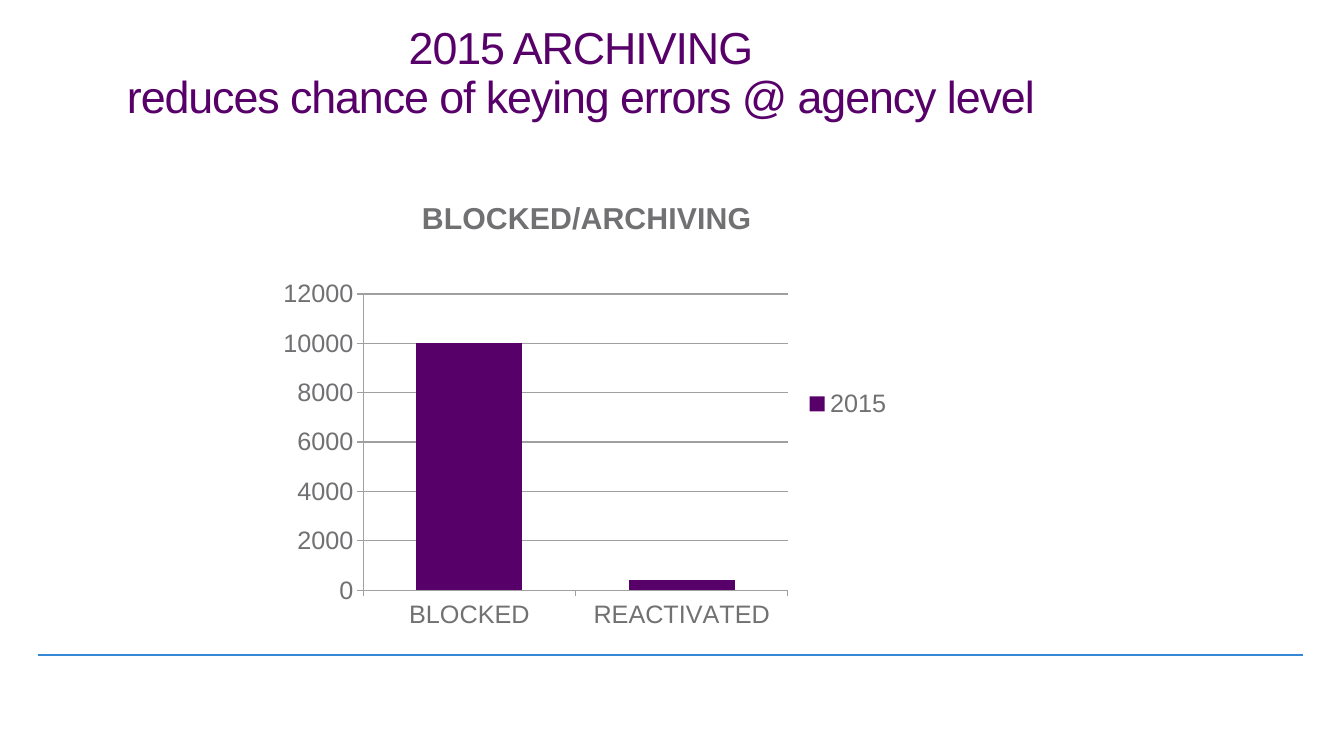
from lxml.etree import SubElement
from pptx import Presentation
from pptx.chart.data import CategoryChartData
from pptx.dml.color import RGBColor
from pptx.enum.chart import XL_CHART_TYPE, XL_LEGEND_POSITION, XL_TICK_MARK
from pptx.enum.shapes import MSO_CONNECTOR
from pptx.enum.text import MSO_ANCHOR, MSO_AUTO_SIZE, PP_ALIGN
from pptx.oxml.ns import qn
from pptx.util import Pt

PURPLE = RGBColor(0x58, 0x00, 0x69)
GRAY = RGBColor(0x71, 0x70, 0x73)
RULE = RGBColor(0xA0, 0xA0, 0xA0)
BLUE = RGBColor(0x33, 0x88, 0xD5)
FONT = "Arial"


def px(num):
    """Turn px at 100.8 to the inch into EMU."""
    return round(num * 914400 / 100.8)


def style(font, size, color, bold=False):
    font.name, font.size, font.bold = FONT, Pt(size), bold
    font.color.rgb = color


def write(frame, text, size, color, bold=False, align=PP_ALIGN.CENTER,
          lead=None, track=None):
    frame.text = text
    for par in frame.paragraphs:
        par.alignment = align
        par.line_spacing = lead
        for run in par.runs:
            style(run.font, size, color, bold)
            if track is not None:
                run.font._element.set("spc", str(track))


def place(part, **spots):
    """Fix a chart part's place, as fractions of the chart."""
    layout = part.find(qn("c:layout"))
    if layout is None:
        layout = part.makeelement(qn("c:layout"), {})
        text = part.find(qn("c:tx"))
        part.insert(0 if text is None else part.index(text) + 1, layout)
    for kid in list(layout):
        layout.remove(kid)
    manual = SubElement(layout, qn("c:manualLayout"))
    if "w" in spots:
        SubElement(manual, qn("c:layoutTarget"), val="inner")
    for axis in "xy":
        SubElement(manual, qn(f"c:{axis}Mode"), val="edge")
    for name, num in spots.items():
        SubElement(manual, qn(f"c:{name}"), val=str(num))


def add_title(slide, left, top, width, height):
    title = slide.shapes.title
    title.left, title.top = px(left), px(top)
    title.width, title.height = px(width), px(height)
    frame = title.text_frame
    frame.word_wrap = True
    frame.auto_size = MSO_AUTO_SIZE.NONE
    frame.vertical_anchor = MSO_ANCHOR.MIDDLE
    write(frame, "2015 ARCHIVING\vreduces chance of keying errors @ agency level",
          32, PURPLE, lead=0.9, track=-80)


def add_rule(slide, left, top, width):
    line = slide.shapes.add_connector(
        MSO_CONNECTOR.STRAIGHT, px(left), px(top), px(left + width), px(top))
    line.line.color.rgb = BLUE
    line.line.width = Pt(1.5)
    SubElement(line._element.spPr, qn("a:effectLst"))


def add_bars(slide, left, top, width, height):
    data = CategoryChartData()
    data.categories = ["BLOCKED", "REACTIVATED"]
    data.add_series("2015", [10000, 400])
    chart = slide.shapes.add_chart(
        XL_CHART_TYPE.COLUMN_CLUSTERED, px(left), px(top), px(width),
        px(height), data).chart
    style(chart.font, 18, GRAY)

    write(chart.chart_title.text_frame, "BLOCKED/ARCHIVING", 21.6, GRAY, bold=True)
    place(chart.chart_title._element, x=0.23, y=0.05)
    place(chart._chartSpace.chart.plotArea, x=0.146, y=0.265, w=0.672, h=0.633)

    chart.has_legend = True
    chart.legend.position = XL_LEGEND_POSITION.RIGHT
    chart.legend.include_in_layout = False

    plot = chart.plots[0]
    plot.gap_width = 100
    plot.vary_by_categories = False
    fill = plot.series[0].format.fill
    fill.solid()
    fill.fore_color.rgb = PURPLE

    scale = chart.value_axis
    scale.minimum_scale, scale.maximum_scale, scale.major_unit = 0, 12000, 2000
    scale.has_major_gridlines = True
    for part in (scale, chart.category_axis, scale.major_gridlines):
        part.format.line.color.rgb = RULE
        part.format.line.width = Pt(0.75)
    for axis in (scale, chart.category_axis):
        axis.major_tick_mark = XL_TICK_MARK.OUTSIDE


def main():
    deck = Presentation()
    deck.slide_width, deck.slide_height = px(1344), px(756)
    slide = deck.slides.add_slide(deck.slide_layouts[5])
    add_rule(slide, 38, 655, 1265)
    add_bars(slide, 271, 170, 632, 468)
    add_title(slide, 40, 25, 1082, 99)
    deck.save("out.pptx")


if __name__ == "__main__":
    main()
